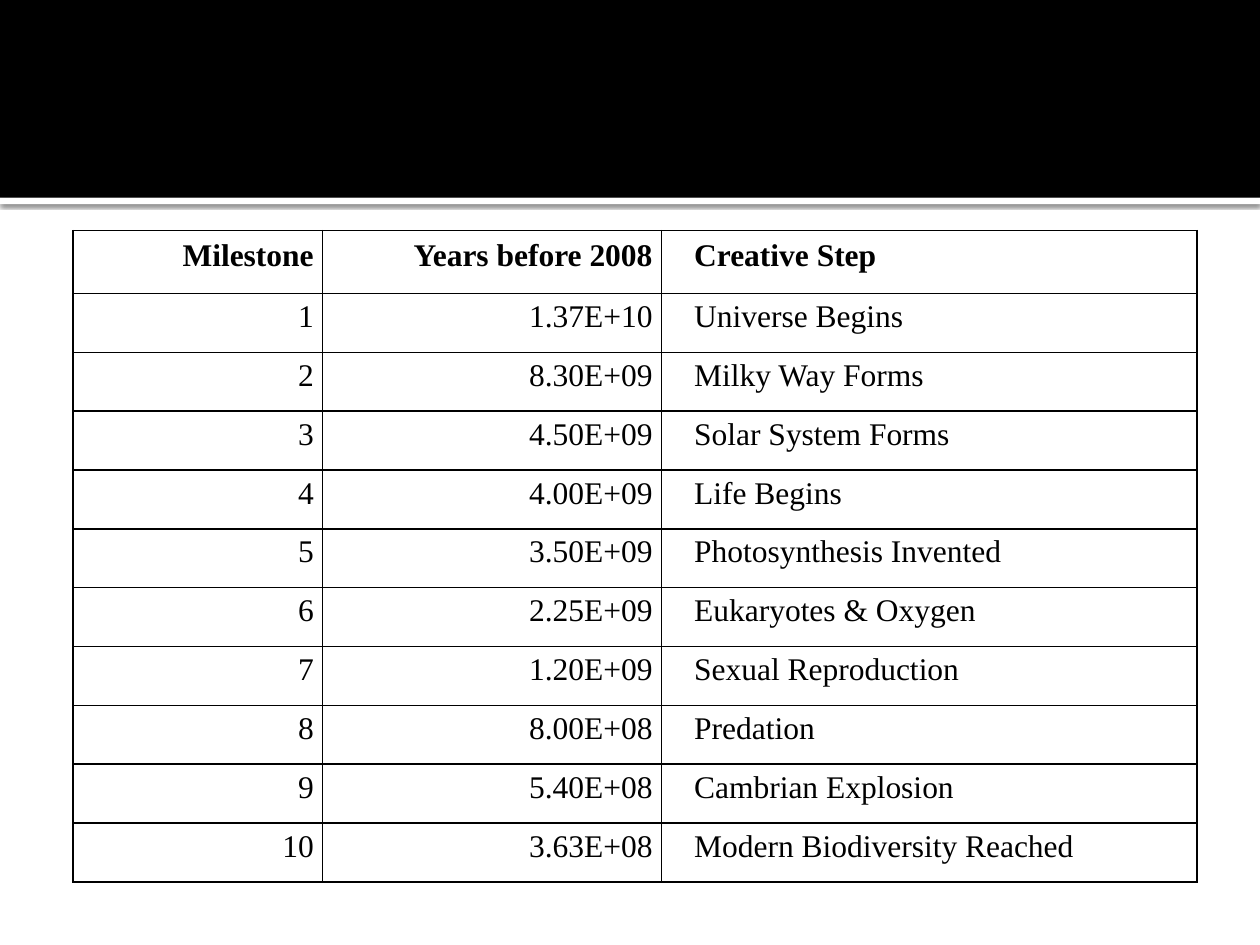
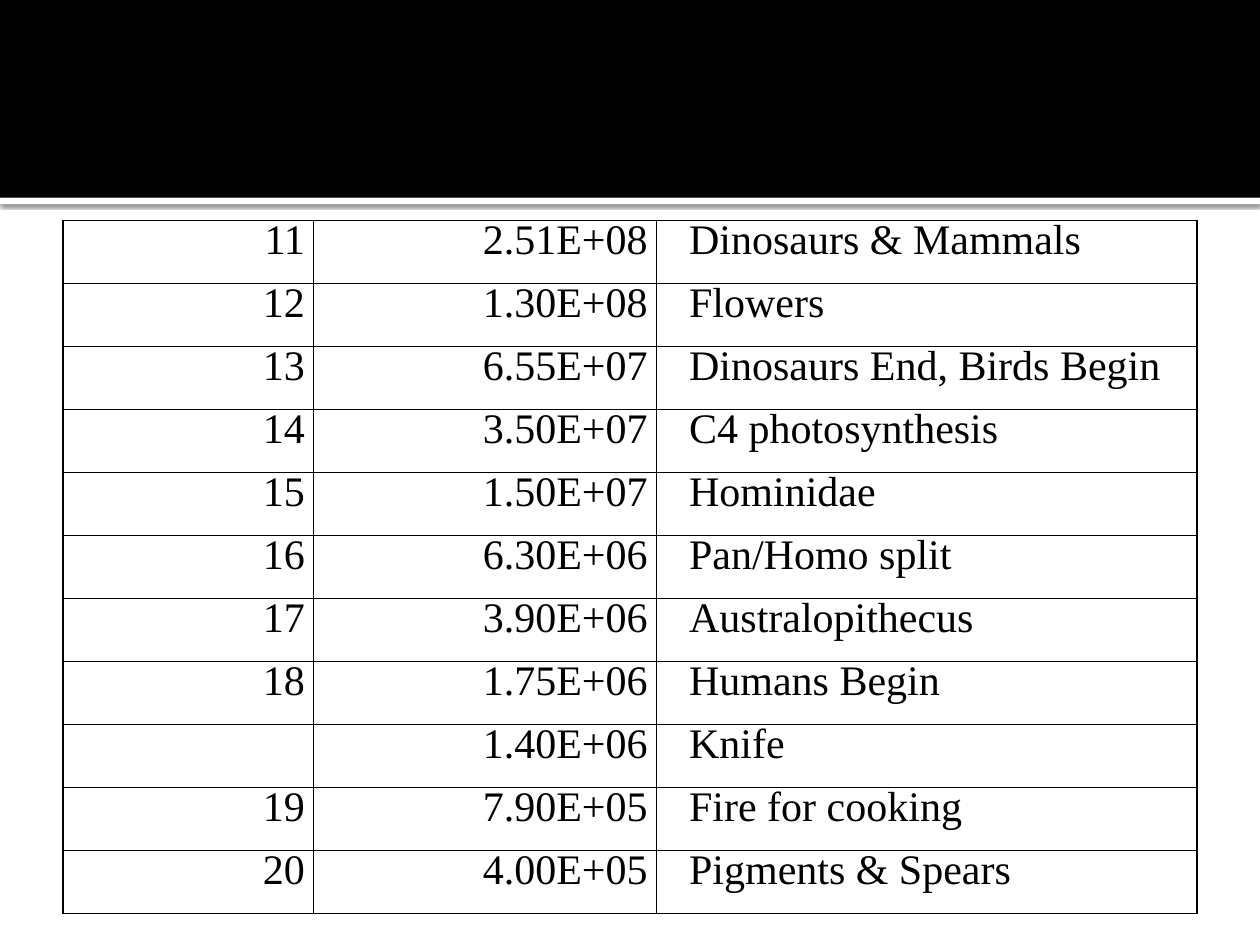
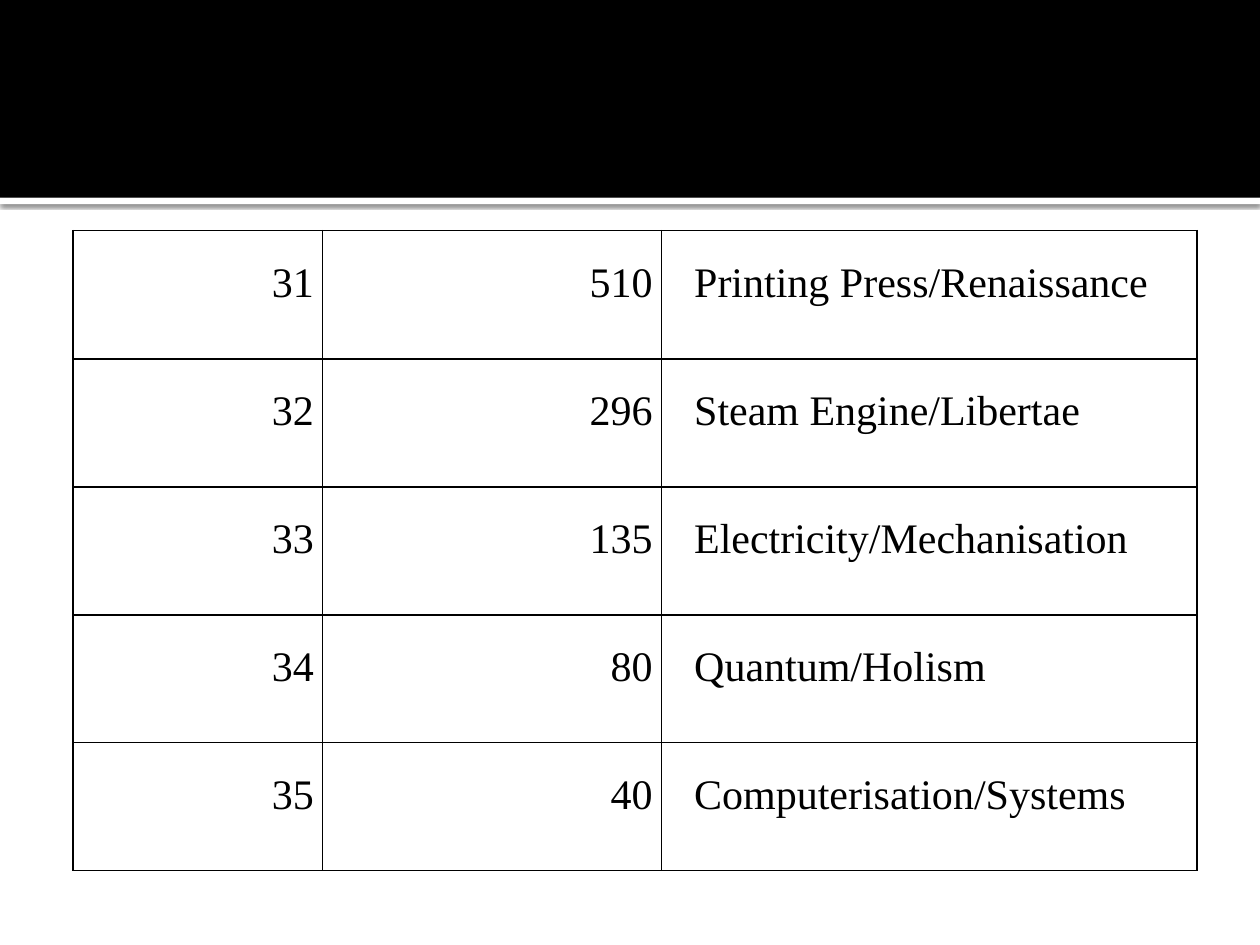
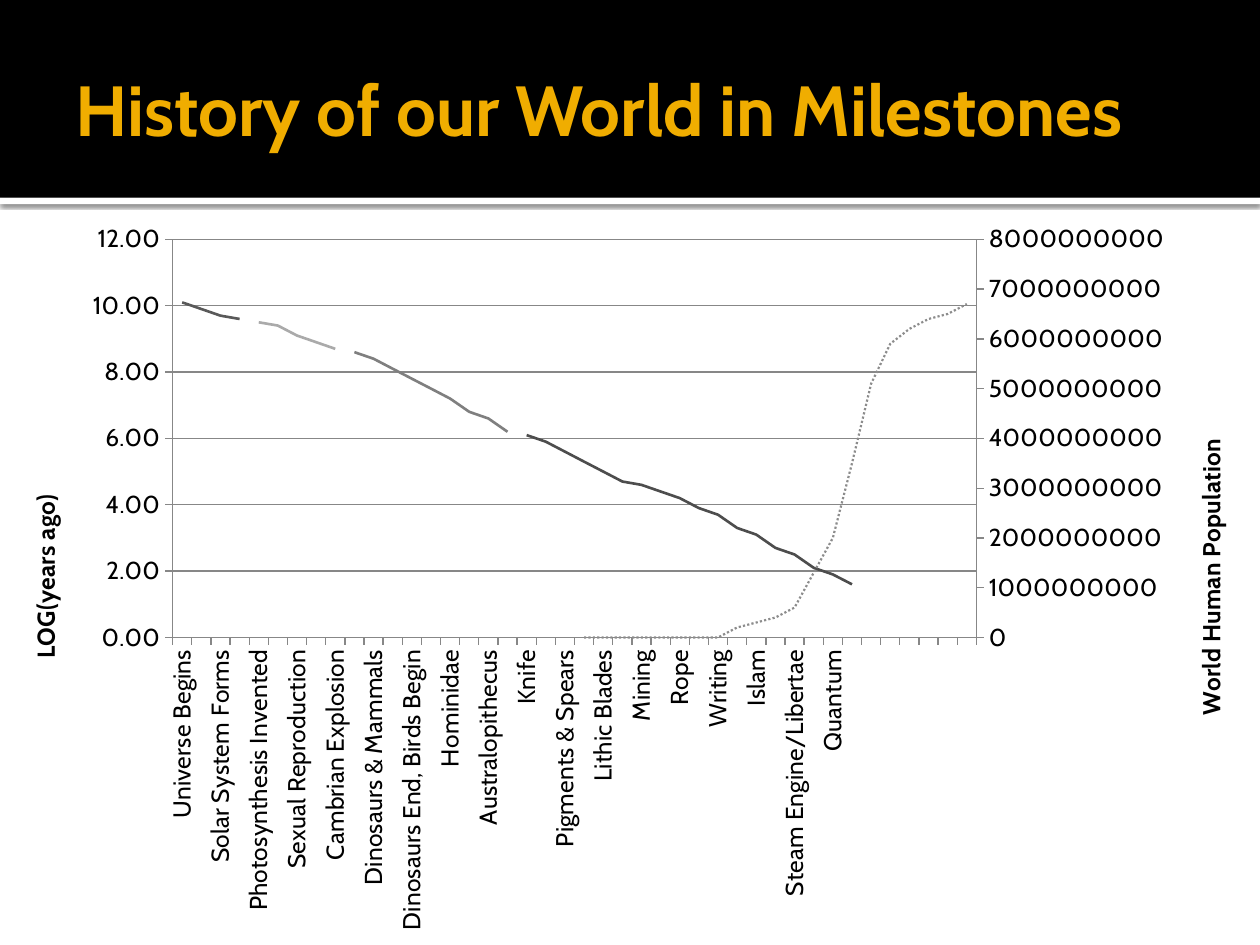
"""Build four slides on the milestones of world history: three tables and a chart."""
from copy import deepcopy
from dataclasses import dataclass

from lxml.etree import SubElement
from pptx import Presentation
from pptx.chart.data import CategoryChartData
from pptx.dml.color import RGBColor
from pptx.enum.chart import XL_CHART_TYPE, XL_TICK_LABEL_POSITION, XL_TICK_MARK
from pptx.enum.dml import MSO_LINE
from pptx.enum.shapes import MSO_SHAPE
from pptx.enum.text import MSO_ANCHOR, PP_ALIGN
from pptx.oxml.ns import qn
from pptx.util import Inches, Pt


@dataclass(frozen=True)
class Theme:
    black: RGBColor = RGBColor(0x00, 0x00, 0x00)
    white: RGBColor = RGBColor(0xFF, 0xFF, 0xFF)
    gold: RGBColor = RGBColor(0xF0, 0xAD, 0x00)
    axis: RGBColor = RGBColor(0x87, 0x87, 0x87)
    eras: tuple = ("595959", "AAAAAA", "7F7F7F", "4D4D4D", "8C8C8C")
    heading_font: str = "Cabin"
    table_font: str = "Times New Roman"
    title_size: Pt = Pt(40.5)
    chart_size: Pt = Pt(14)
    line_spacing: Pt = Pt(13)


def apply(target, formats):
    for name, value in formats.items():
        setattr(target, name, value)


def place(node, settings):
    layout = node.find(qn("c:layout"))
    if layout is None:
        layout = SubElement(node, qn("c:layout"))
        node.insert(0, layout)
    for child in list(layout):
        layout.remove(child)
    manual = SubElement(layout, qn("c:manualLayout"))
    for name, value in settings.items():
        SubElement(manual, qn("c:" + name)).set("val", str(value))


theme = Theme()
deck = Presentation()
apply(deck, {"slide_width": Inches(10), "slide_height": Inches(7.5)})

early_steps = [
    ("Milestone", "Years before 2008", "Creative Step"),
    ("1", "1.37E+10", "Universe Begins"),
    ("2", "8.30E+09", "Milky Way Forms"),
    ("3", "4.50E+09", "Solar System Forms"),
    ("4", "4.00E+09", "Life Begins"),
    ("5", "3.50E+09", "Photosynthesis Invented"),
    ("6", "2.25E+09", "Eukaryotes & Oxygen"),
    ("7", "1.20E+09", "Sexual Reproduction"),
    ("8", "8.00E+08", "Predation"),
    ("9", "5.40E+08", "Cambrian Explosion"),
    ("10", "3.63E+08", "Modern Biodiversity Reached"),
]
middle_steps = [
    ("11", "2.51E+08", "Dinosaurs & Mammals"),
    ("12", "1.30E+08", "Flowers"),
    ("13", "6.55E+07", "Dinosaurs End, Birds Begin"),
    ("14", "3.50E+07", "C4 photosynthesis"),
    ("15", "1.50E+07", "Hominidae"),
    ("16", "6.30E+06", "Pan/Homo split"),
    ("17", "3.90E+06", "Australopithecus"),
    ("18", "1.75E+06", "Humans Begin"),
    ("", "1.40E+06", "Knife"),
    ("19", "7.90E+05", "Fire for cooking"),
    ("20", "4.00E+05", "Pigments & Spears"),
]
modern_steps = [
    ("31", "510", "Printing Press/Renaissance"),
    ("32", "296", "Steam Engine/Libertae"),
    ("33", "135", "Electricity/Mechanisation"),
    ("34", "80", "Quantum/Holism"),
    ("35", "40", "Computerisation/Systems"),
]

pages = []
for number in range(4):
    page = deck.slides.add_slide(deck.slide_layouts[6])
    for top, height, color in ((1.57, 0.05, theme.white), (0, 1.57, theme.black)):
        band = page.shapes.add_shape(
            MSO_SHAPE.RECTANGLE, 0, Inches(top), deck.slide_width, Inches(height))
        band.shadow.inherit = False
        band.fill.solid()
        band.fill.fore_color.rgb = color
        band.line.fill.background()
        if color == theme.white:
            effects = band.element.spPr.find(qn("a:effectLst"))
            shadow = SubElement(effects, qn("a:outerShdw"), blurRad=str(Pt(2.5)),
                                dist=str(Pt(0.8)), dir="5400000", rotWithShape="0")
            tint = SubElement(shadow, qn("a:srgbClr"), val=str(theme.black))
            SubElement(tint, qn("a:alpha"), val="60000")
    pages.append(page)

wide = (1.99, 2.72, 4.29)
narrow = (1.98, 2.69, 4.25)
tables = [
    (early_steps, 0.58, 1.83, narrow, 5.17, 0.5, 18),
    (middle_steps, 0.5, 1.75, wide, 5.5, 0.5, 24),
    (modern_steps, 0.58, 1.83, narrow, 5.08, 1.02, 24),
]
for page, (steps, left, top, widths, height, first_height, size) in zip(pages, tables):
    frame = page.shapes.add_table(len(steps), 3, Inches(left), Inches(top),
                                  Inches(sum(widths)), Inches(height))
    table = frame.table
    apply(table, {"first_row": False, "horz_banding": False})
    for column, width in zip(table.columns, widths):
        column.width = Inches(width)
    other_height = (height - first_height) / (len(steps) - 1)
    for row_number, step in enumerate(steps):
        row = table.rows[row_number]
        row.height = Inches(other_height if row_number else first_height)
        for column_number, wording in enumerate(step):
            cell = row.cells[column_number]
            apply(cell, {"margin_left": Inches(0.07), "margin_right": Inches(0.07),
                         "margin_top": 0, "margin_bottom": 0,
                         "vertical_anchor": MSO_ANCHOR.MIDDLE})
            cell.fill.background()
            cell_format = cell._tc.get_or_add_tcPr()
            for position, side in enumerate(("lnL", "lnR", "lnT", "lnB")):
                border = SubElement(cell_format, qn("a:" + side), w=str(Pt(1)))
                paint = SubElement(border, qn("a:solidFill"))
                SubElement(paint, qn("a:srgbClr"), val=str(theme.black))
                cell_format.insert(position, border)
            para = cell.text_frame.paragraphs[0]
            apply(para, {"line_spacing": theme.line_spacing,
                         "alignment": PP_ALIGN.JUSTIFY if column_number == 2 else PP_ALIGN.RIGHT})
            para_format = para._p.get_or_add_pPr()
            para_format.set("marL", "0")
            para_format.set("indent", str(Inches(0.19)))
            if wording:
                span = para.add_run()
                span.text = wording
                apply(span.font, {"name": theme.table_font, "size": Pt(size),
                                  "bold": step[0] == "Milestone"})
                span.font.color.rgb = theme.black

page = pages[3]
box = page.shapes.add_textbox(Inches(0.5), Inches(0.17), Inches(9), Inches(1.37))
apply(box.text_frame, {"word_wrap": True, "vertical_anchor": MSO_ANCHOR.MIDDLE,
                       "margin_left": Inches(0.1), "margin_right": Inches(0.05),
                       "margin_top": Inches(0.05), "margin_bottom": Inches(0.05)})
span = box.text_frame.paragraphs[0].add_run()
span.text = "History of our World in Milestones"
apply(span.font, {"name": theme.heading_font, "size": theme.title_size, "bold": True})
span.font.color.rgb = theme.gold

point_count = 42
label_step = 2
labels = [step[2] for step in (early_steps[1:] + middle_steps)[::label_step]] + [
    "Lithic Blades", "Mining", "Rope", "Writing", "Islam", "Steam Engine/Libertae", "Quantum"]
names = [""] * point_count
for number, label in enumerate(labels):
    names[number * label_step] = label
data = CategoryChartData()
data.categories = names
millions = [200, 300, 400, 600, 1300, 2000, 3500, 5100, 5900, 6200, 6400, 6500, 6700]
eras = [
    (0, [10.1, 9.9, 9.7, 9.6]),
    (4, [9.5, 9.4, 9.1, 8.9, 8.7]),
    (9, [8.6, 8.4, 8.1, 7.8, 7.5, 7.2, 6.8, 6.6, 6.2]),
    (18, [6.1, 5.9, 5.6, 5.3, 5, 4.7, 4.6, 4.4, 4.2, 3.9, 3.7, 3.3, 3.1, 2.7, 2.5, 2.1,
          1.9, 1.6]),
    (21, [0] * 8 + [million * 10**6 for million in millions]),
]
for number, (start, values) in enumerate(eras, 1):
    after = point_count - start - len(values)
    data.add_series(f"Series {number}", [None] * start + values + [None] * after)

chart_width, chart_height = 10, 5.83
chart = page.shapes.add_chart(XL_CHART_TYPE.LINE, 0, Inches(1.67), Inches(chart_width),
                              Inches(chart_height), data).chart
apply(chart, {"has_legend": False, "has_title": False})
apply(chart.font, {"name": theme.heading_font, "size": theme.chart_size})
chart.font.color.rgb = theme.black
chart.plots[0].vary_by_categories = False
for series, color in zip(chart.plots[0].series, theme.eras):
    series.smooth = False
    series.format.line.width = Pt(1.5)
    series.format.line.color.rgb = RGBColor.from_string(color)
apply(series.format.line, {"width": Pt(1.25), "dash_style": MSO_LINE.ROUND_DOT})

category_axis, value_axis = chart.category_axis, chart.value_axis
for axis in (category_axis, value_axis):
    apply(axis, {"major_tick_mark": XL_TICK_MARK.OUTSIDE, "minor_tick_mark": XL_TICK_MARK.NONE,
                 "tick_label_position": XL_TICK_LABEL_POSITION.NEXT_TO_AXIS})
    axis.format.line.color.rgb = theme.axis
    apply(axis.tick_labels.font, {"name": theme.heading_font, "size": theme.chart_size})
value_axis.has_major_gridlines = True
value_axis.major_gridlines.format.line.color.rgb = theme.axis
apply(value_axis.tick_labels, {"number_format": "0.00", "number_format_is_linked": False})
span = value_axis.axis_title.text_frame.paragraphs[0].add_run()
span.text = "LOG(years ago)"
apply(span.font, {"name": theme.heading_font, "size": theme.chart_size, "bold": True})
span.font.color.rgb = theme.black

plot_area = chart.element.find(".//" + qn("c:plotArea"))
lines, categories, scale = [
    plot_area.find(qn("c:" + tag)) for tag in ("lineChart", "catAx", "valAx")]
title = scale.find(qn("c:title"))
for node in (categories.find(qn("c:txPr")), title):
    turn = node.find(".//" + qn("a:bodyPr"))
    turn.set("rot", "-5400000")
    turn.set("vert", "horz")
label_skip = SubElement(categories, qn("c:tickLblSkip"), val=str(label_step))
categories.find(qn("c:noMultiLvlLbl")).addprevious(label_skip)

right_lines, right_categories, right_scale = [
    deepcopy(node) for node in (lines, categories, scale)]
lines.remove(lines.findall(qn("c:ser"))[-1])
for series_node in right_lines.findall(qn("c:ser"))[:-1]:
    right_lines.remove(series_node)
right_ids = {categories.find(qn("c:axId")).get("val"): "5001",
             scale.find(qn("c:axId")).get("val"): "5002"}
for node in (right_lines, right_categories, right_scale):
    for link in node.iter(qn("c:axId"), qn("c:crossAx")):
        link.set("val", right_ids[link.get("val")])
right_categories.find(qn("c:delete")).set("val", "1")
right_scale.remove(right_scale.find(qn("c:majorGridlines")))
for tag, name, value in (("axPos", "val", "r"), ("crosses", "val", "max"),
                         ("numFmt", "formatCode", "0")):
    right_scale.find(qn("c:" + tag)).set(name, value)
right_title = right_scale.find(qn("c:title"))
right_title.find(".//" + qn("a:t")).text = "World Human Population"
lines.addnext(right_lines)
scale.addnext(right_scale)
right_scale.addnext(right_categories)

edges = {"xMode": "edge", "yMode": "edge"}
place(plot_area, {"layoutTarget": "inner", **edges,
                  "x": 1.37 / chart_width, "y": 0.23 / chart_height,
                  "w": 6.38 / chart_width, "h": 3.16 / chart_height})
place(title, {**edges, "x": 0.19 / chart_width, "y": 2.22 / chart_height})
place(right_title, {**edges, "x": 9.44 / chart_width, "y": 1.78 / chart_height})

deck.save("out.pptx")
